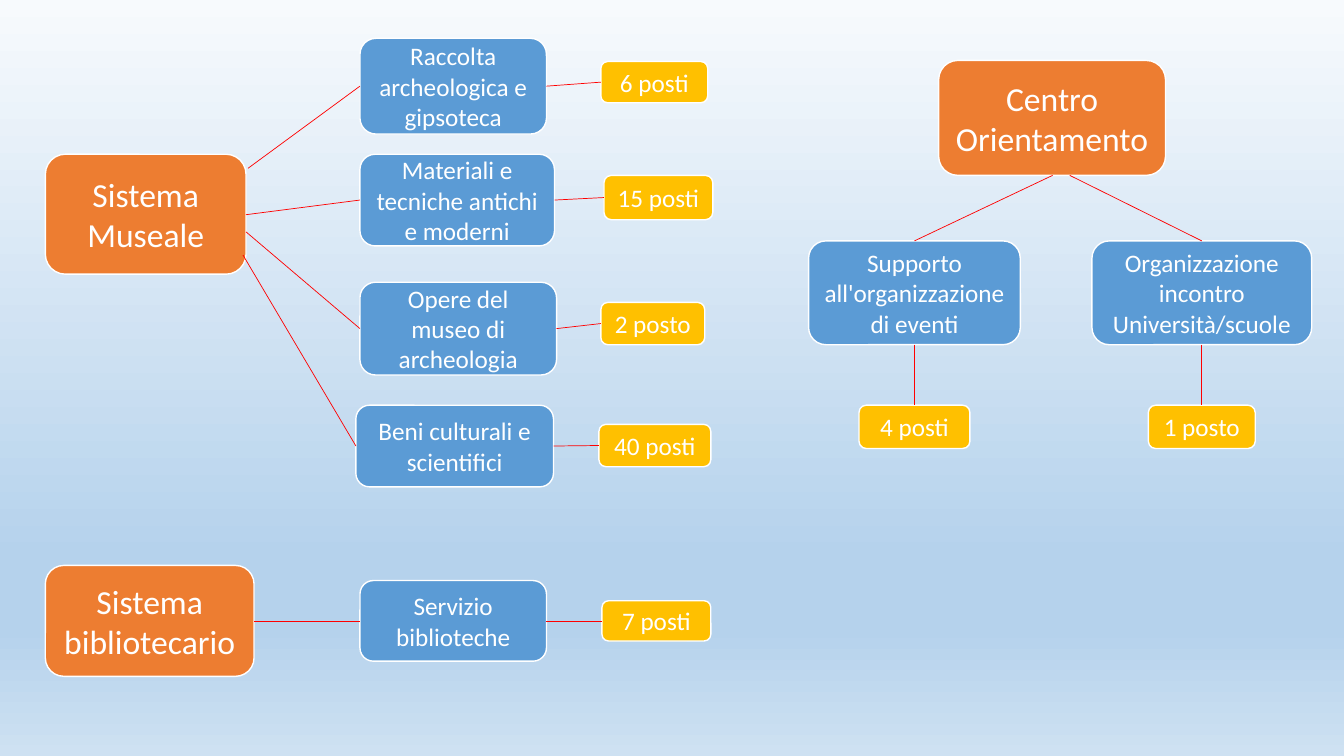
from copy import deepcopy
from dataclasses import dataclass

from lxml import etree
from pptx import Presentation
from pptx import util as u
from pptx.dml import color
from pptx.enum import shapes, text
from pptx.oxml import ns

COLORS = {
    "category": "ED7D31",
    "activity": "5B9BD5",
    "places": "FFC000",
    "white": "FFFFFF",
    "link": "FF0000",
}
TEXT_SIZES = {"category": 24, "activity": 18, "places": 18}
BACKGROUND_STOPS = [(0, "F7FAFD"), (0.74, "B5D2EC"), (0.83, "B5D2EC"), (1, "CEE1F2")]
TOP, LEFT, BOTTOM, RIGHT = range(4)


@dataclass
class Box:
    label: str
    left: float
    top: float
    width: float
    height: float


@dataclass
class Branch:
    link_start: tuple[float, float]
    activity: Box
    places: Box


@dataclass
class Tree:
    category: Box
    exit_side: int
    entry_side: int
    branches: list[Branch]


TREES = [
    Tree(Box("Sistema Museale", 0.45, 1.53, 1.99, 1.19), RIGHT, LEFT, [
        Branch((2.46, 1.67),
               Box("Raccolta archeologica e gipsoteca", 3.57, 0.38, 1.85, 0.95),
               Box("6 posti", 5.96, 0.61, 1.06, 0.41)),
        Branch((2.44, 2.13),
               Box("Materiali e tecniche antichi e moderni", 3.57, 1.53, 1.93, 0.91),
               Box("15 posti", 5.99, 1.74, 1.08, 0.44)),
        Branch((2.44, 2.3),
               Box("Opere del museo di archeologia", 3.57, 2.8, 1.95, 0.92),
               Box("2 posto", 5.96, 3, 1.03, 0.42)),
        Branch((2.41, 2.53),
               Box("Beni culturali e scientifici", 3.53, 4.02, 1.96, 0.81),
               Box("40 posti", 5.94, 4.21, 1.11, 0.42)),
    ]),
    Tree(Box("Sistema bibliotecario", 0.45, 5.61, 2.07, 1.1), RIGHT, LEFT, [
        Branch((2.52, 6.16),
               Box("Servizio biblioteche", 3.57, 5.76, 1.85, 0.8),
               Box("7 posti", 5.97, 5.96, 1.08, 0.4)),
    ]),
    Tree(Box("Centro Orientamento", 9.31, 0.6, 2.25, 1.14), BOTTOM, TOP, [
        Branch((10.44, 1.74),
               Box("Supporto all'organizzazione di eventi", 8.02, 2.39, 2.1, 1.03),
               Box("4 posti", 8.52, 4.02, 1.1, 0.43)),
        Branch((10.61, 1.74),
               Box("Organizzazione incontro Università/scuole", 10.83, 2.39, 2.18, 1.03),
               Box("1 posto", 11.39, 4.02, 1.06, 0.43)),
    ]),
]


def rgb(hex_value: str) -> color.RGBColor:
    return color.RGBColor.from_string(hex_value)


def paint_background(slide) -> None:
    fill = slide.background.fill
    fill.gradient()
    fill.gradient_angle = 270
    stop_list = slide.element.find(".//" + ns.qn("a:gsLst"))
    while len(stop_list) < len(BACKGROUND_STOPS):
        stop_list.append(deepcopy(stop_list[0]))
    for stop, (position, hex_value) in zip(fill.gradient_stops, BACKGROUND_STOPS):
        stop.position = position
        stop.color.rgb = rgb(hex_value)


def draw_box(slide, box: Box, level: str):
    shape = slide.shapes.add_shape(
        shapes.MSO_SHAPE.ROUNDED_RECTANGLE,
        u.Inches(box.left), u.Inches(box.top), u.Inches(box.width), u.Inches(box.height))
    shape.shadow.inherit = False
    shape.fill.solid()
    shape.fill.fore_color.rgb = rgb(COLORS[level])
    shape.line.color.rgb = rgb(COLORS["white"])
    shape.line.width = u.Pt(1)
    frame = shape.text_frame
    frame.word_wrap = True
    frame.vertical_anchor = text.MSO_ANCHOR.MIDDLE
    frame.text = box.label
    paragraph = frame.paragraphs[0]
    paragraph.alignment = text.PP_ALIGN.CENTER
    paragraph.font.name = "Calibri"
    paragraph.font.size = u.Pt(TEXT_SIZES[level])
    paragraph.font.color.rgb = rgb(COLORS["white"])
    return shape


def side_point(box: Box, side: int) -> tuple[float, float]:
    center_x, center_y = box.left + box.width / 2, box.top + box.height / 2
    return {
        TOP: (center_x, box.top),
        LEFT: (box.left, center_y),
        BOTTOM: (center_x, box.top + box.height),
        RIGHT: (box.left + box.width, center_y),
    }[side]


def draw_link(slide, start: tuple[float, float], end: tuple[float, float]):
    connector = slide.shapes.add_connector(
        shapes.MSO_CONNECTOR.STRAIGHT, *(u.Inches(value) for value in start + end))
    connector.line.color.rgb = rgb(COLORS["link"])
    connector.line.width = u.Pt(0.5)
    properties = connector.element.find(ns.qn("p:spPr"))
    etree.SubElement(properties, ns.qn("a:effectLst"))
    return connector


def draw_tree(slide, tree: Tree) -> None:
    draw_box(slide, tree.category, "category")
    for branch in tree.branches:
        activity = draw_box(slide, branch.activity, "activity")
        places = draw_box(slide, branch.places, "places")
        entry = side_point(branch.activity, tree.entry_side)
        trunk = draw_link(slide, branch.link_start, entry)
        trunk.end_connect(activity, tree.entry_side)
        twig = draw_link(slide, side_point(branch.activity, tree.exit_side),
                         side_point(branch.places, tree.entry_side))
        twig.begin_connect(activity, tree.exit_side)
        twig.end_connect(places, tree.entry_side)


def main() -> None:
    presentation = Presentation()
    presentation.slide_width = u.Inches(13.33)
    presentation.slide_height = u.Inches(7.5)
    slide = presentation.slides.add_slide(presentation.slide_layouts[6])
    paint_background(slide)
    for tree in TREES:
        draw_tree(slide, tree)
    presentation.save("out.pptx")


if __name__ == "__main__":
    main()
